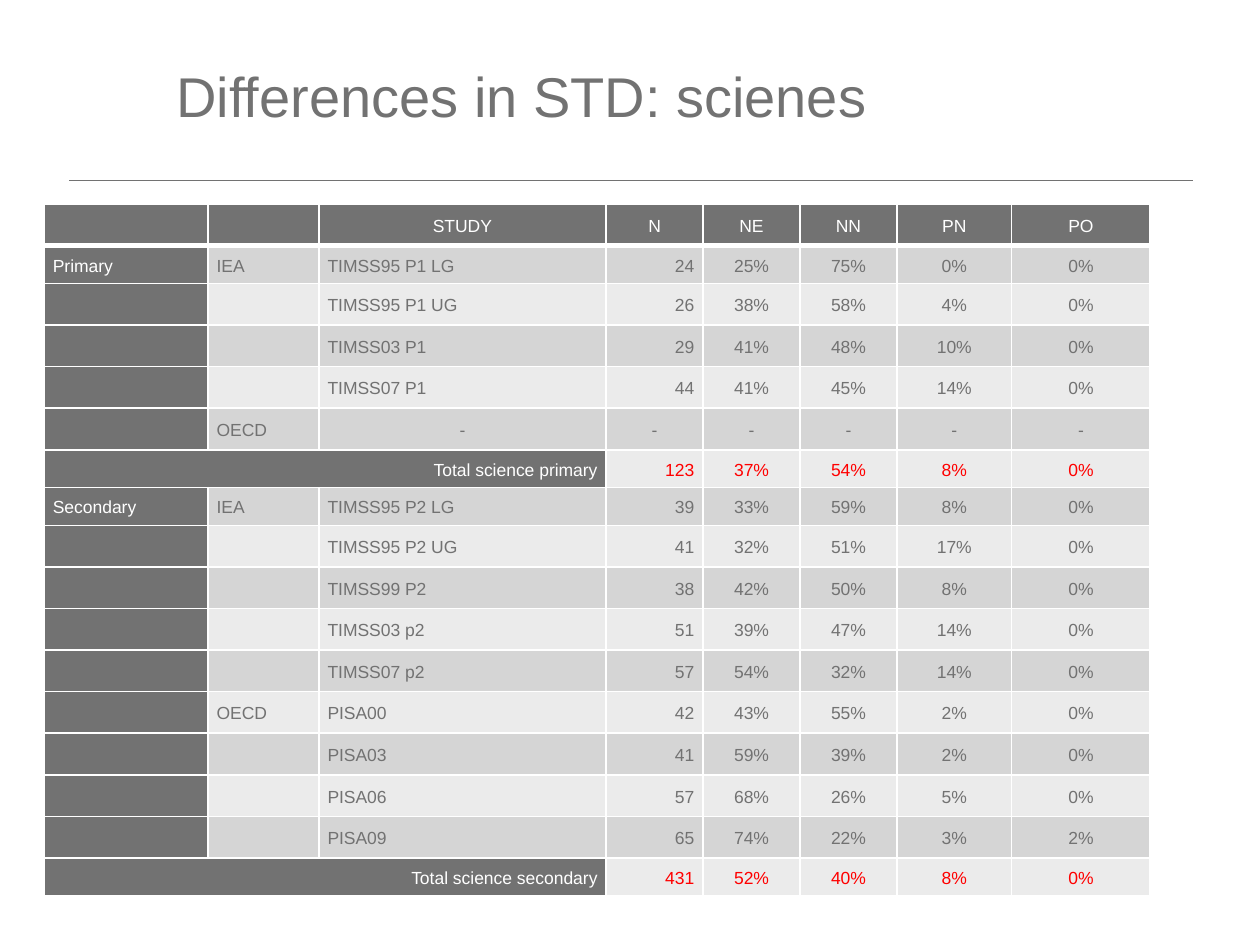
from dataclasses import dataclass

import lxml.etree
import pptx
import pptx.dml.color
import pptx.enum.shapes
import pptx.enum.text
import pptx.oxml.ns
import pptx.util
from pptx.util import Inches

ALIGN = pptx.enum.text.PP_ALIGN


@dataclass(frozen=True)
class Theme:
    font: str = "Arial"
    title_size: int = 32
    table_size: int = 10
    grey: str = "727272"
    dark_band: str = "D5D5D5"
    light_band: str = "EBEBEB"
    white: str = "FFFFFF"
    total: str = "FF0000"


THEME = Theme()

COLUMN_WIDTHS = [1.3, 0.88, 2.28, 0.77, 0.77, 0.77, 0.91, 1.1]
COLUMN_ALIGN = [ALIGN.LEFT] * 3 + [ALIGN.RIGHT] + [ALIGN.CENTER] * 4
LABEL_COLUMNS = 3
ROW_HEIGHT, SHORT_ROW_HEIGHT = 0.33, 0.3

ROWS = [
    ["", "", "STUDY", "N", "NE", "NN", "PN", "PO"],
    ["Primary", "IEA", "TIMSS95 P1 LG", "24", "25%", "75%", "0%", "0%"],
    ["", "", "TIMSS95 P1 UG", "26", "38%", "58%", "4%", "0%"],
    ["", "", "TIMSS03 P1", "29", "41%", "48%", "10%", "0%"],
    ["", "", "TIMSS07 P1", "44", "41%", "45%", "14%", "0%"],
    ["", "OECD", "-", "-", "-", "-", "-", "-"],
    ["Total science primary", "", "", "123", "37%", "54%", "8%", "0%"],
    ["Secondary", "IEA", "TIMSS95 P2 LG", "39", "33%", "59%", "8%", "0%"],
    ["", "", "TIMSS95 P2 UG", "41", "32%", "51%", "17%", "0%"],
    ["", "", "TIMSS99 P2", "38", "42%", "50%", "8%", "0%"],
    ["", "", "TIMSS03 p2", "51", "39%", "47%", "14%", "0%"],
    ["", "", "TIMSS07 p2", "57", "54%", "32%", "14%", "0%"],
    ["", "OECD", "PISA00", "42", "43%", "55%", "2%", "0%"],
    ["", "", "PISA03", "41", "59%", "39%", "2%", "0%"],
    ["", "", "PISA06", "57", "68%", "26%", "5%", "0%"],
    ["", "", "PISA09", "65", "74%", "22%", "3%", "2%"],
    ["Total science secondary", "", "", "431", "52%", "40%", "8%", "0%"],
]


def rgb(colour):
    return pptx.dml.color.RGBColor.from_string(colour)


def add_run(paragraph, text, size, colour):
    run = paragraph.add_run()
    run.text = text
    run.font.name = THEME.font
    run.font.size = pptx.util.Pt(size)
    run.font.color.rgb = rgb(colour)


def add_title(slide, text):
    title = slide.shapes.title
    title.left, title.top = Inches(1.3), Inches(0.36)
    title.width, title.height = Inches(8.19), Inches(0.79)
    frame = title.text_frame
    frame.vertical_anchor = pptx.enum.text.MSO_ANCHOR.MIDDLE
    paragraph = frame.paragraphs[0]
    paragraph.alignment = ALIGN.LEFT
    add_run(paragraph, text, THEME.title_size, THEME.grey)


def add_rule(slide, left, top, width):
    rule = slide.shapes.add_connector(
        pptx.enum.shapes.MSO_CONNECTOR.STRAIGHT,
        Inches(left), Inches(top), Inches(left + width), Inches(top))
    rule.line.color.rgb = rgb(THEME.grey)
    rule.line.width = pptx.util.Pt(0.5)
    lxml.etree.SubElement(rule._element.spPr, pptx.oxml.ns.qn("a:effectLst"))


def set_borders(cell, bottom_width):
    """Draw white borders; call before the fill, which must follow them in the XML."""
    qn = pptx.oxml.ns.qn
    properties = cell._tc.get_or_add_tcPr()
    for side, width in (("L", 1), ("R", 1), ("T", 1), ("B", bottom_width)):
        border = lxml.etree.SubElement(
            properties, qn(f"a:ln{side}"), w=str(pptx.util.Pt(width)))
        fill = lxml.etree.SubElement(border, qn("a:solidFill"))
        lxml.etree.SubElement(fill, qn("a:srgbClr"), val=THEME.white)


def cell_style(row, column, text):
    """Return the fill, text colour and alignment for a cell's place."""
    is_header = row == 0
    is_total = ROWS[row][0].startswith("Total")
    align = COLUMN_ALIGN[column]
    if is_header or text == "-":
        align = ALIGN.CENTER
    elif is_total and column == 0:
        align = ALIGN.RIGHT
    if is_header or column == 0:
        return THEME.grey, THEME.white, align
    band = THEME.dark_band if row % 2 else THEME.light_band
    return band, THEME.total if is_total else THEME.grey, align


def fill_cell(cell, row, column, text):
    fill, colour, align = cell_style(row, column, text)
    set_borders(cell, bottom_width=3 if row == 0 else 1)
    cell.fill.solid()
    cell.fill.fore_color.rgb = rgb(fill)
    cell.margin_left = cell.margin_right = Inches(0.07)
    cell.margin_top = cell.margin_bottom = 0
    cell.vertical_anchor = pptx.enum.text.MSO_ANCHOR.MIDDLE
    if text:
        paragraph = cell.text_frame.paragraphs[0]
        paragraph.alignment = align
        paragraph.line_spacing = 1.15
        add_run(paragraph, text, THEME.table_size, colour)


def add_study_table(slide):
    # Rows that open or total a school level are shorter.
    heights = [SHORT_ROW_HEIGHT if values[0] else ROW_HEIGHT for values in ROWS]
    table = slide.shapes.add_table(
        len(ROWS), len(COLUMN_WIDTHS), Inches(0.35), Inches(1.62),
        Inches(sum(COLUMN_WIDTHS)), Inches(sum(heights))).table
    table.first_row = table.horz_banding = False
    for column, width in zip(table.columns, COLUMN_WIDTHS):
        column.width = Inches(width)
    for row, (values, height) in enumerate(zip(ROWS, heights)):
        table.rows[row].height = Inches(height)
        for column, text in enumerate(values):
            fill_cell(table.cell(row, column), row, column, text)
        if values[0].startswith("Total"):
            table.cell(row, 0).merge(table.cell(row, LABEL_COLUMNS - 1))


def main():
    presentation = pptx.Presentation()
    presentation.slide_width = Inches(10)
    presentation.slide_height = Inches(7.5)
    slide = presentation.slides.add_slide(presentation.slide_layouts[5])
    add_rule(slide, left=0.55, top=1.43, width=8.92)
    add_study_table(slide)
    add_title(slide, "Differences in STD: scienes")
    presentation.save("out.pptx")


if __name__ == "__main__":
    main()
